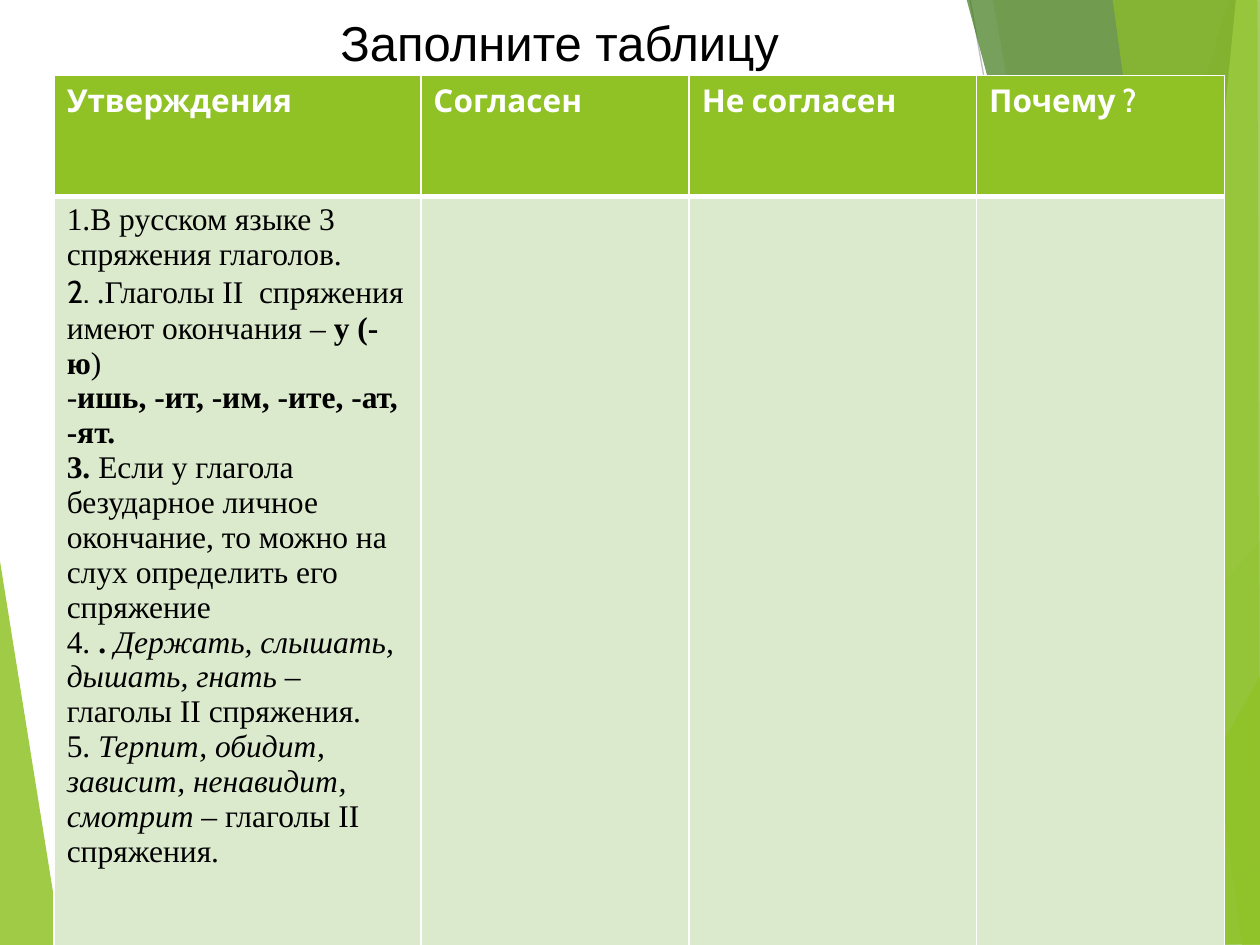
from lxml import etree
from pptx import Presentation
from pptx.dml.color import RGBColor
from pptx.enum.shapes import MSO_CONNECTOR
from pptx.enum.text import MSO_ANCHOR, PP_ALIGN
from pptx.oxml.ns import qn
from pptx.util import Inches, Pt

STRAIGHT = MSO_CONNECTOR.STRAIGHT
TOP = MSO_ANCHOR.TOP
CENTER = PP_ALIGN.CENTER

WHITE = RGBColor(0xFF, 0xFF, 0xFF)
BLACK = RGBColor(0, 0, 0)
GREEN = RGBColor(0x90, 0xC2, 0x26)
MID_GREEN = RGBColor(0x54, 0xA0, 0x21)
DARK_GREEN = RGBColor(0x3F, 0x78, 0x19)
LIGHT_GREEN = RGBColor(0xC0, 0xE4, 0x74)
PALE_GREEN = RGBColor(0xDB, 0xE9, 0xCD)
LIGHT_GRAY = RGBColor(0xD9, 0xD9, 0xD9)
GRAY = RGBColor(0xBF, 0xBF, 0xBF)
SERIF = "Times New Roman"
SANS = "Cabin"

prs = Presentation()
prs.slide_width, prs.slide_height = Inches(10), Inches(7.5)
slide = prs.slides.add_slide(prs.slide_layouts[5])
shapes = slide.shapes


def add_facet(points, color, opacity):
    corners = [(Inches(x), Inches(y)) for x, y in points]
    builder = shapes.build_freeform(*corners[0], scale=1.0)
    builder.add_line_segments(corners[1:], close=True)
    facet = builder.convert_to_shape()
    facet.shadow.inherit = False
    facet.fill.solid()
    facet.fill.fore_color.rgb = color
    facet.line.fill.background()
    srgb = facet.element.spPr.find(".//" + qn("a:srgbClr"))
    etree.SubElement(srgb, qn("a:alpha"), val=str(opacity * 1000))


def set_border(cell, side, width):
    props = cell._tc.get_or_add_tcPr()
    border = etree.SubElement(props, qn("a:" + side), w=str(Pt(width)))
    fill = etree.SubElement(border, qn("a:solidFill"))
    etree.SubElement(fill, qn("a:srgbClr"), val=str(WHITE))


add_facet([(-0.01, 4.39), (0.49, 7.51), (-0.01, 7.5)], GREEN, 85)

for x1, y1, x2, y2, color in [
    (5.61, 7.5, 10.01, 4.57, LIGHT_GRAY),
    (7.7, 0, 9.04, 7.5, GRAY),
]:
    ray = shapes.add_connector(STRAIGHT, Inches(x1), Inches(y1), Inches(x2), Inches(y2))
    ray.line.color.rgb = color
    ray.line.width = Pt(0.75)
    etree.SubElement(ray.element.spPr, qn("a:effectLst"))

for points, color, opacity in [
    ([(9.75, 0), (7.54, 7.5), (10.02, 7.51), (10.01, 0.01)], GREEN, 30),
    ([(7.88, -0.01), (9.19, 7.5), (10.01, 7.5), (10.01, -0.01)], GREEN, 20),
    ([(7.26, 7.5), (10, 4.29), (10.01, 7.5)], MID_GREEN, 72),
    ([(7.67, -0.01), (9.7, 7.5), (10.01, 7.49), (10.01, -0.01)], DARK_GREEN, 70),
    ([(9.81, -0.01), (9.07, 7.5), (10.01, 7.5), (10, -0.01)], LIGHT_GREEN, 70),
    ([(8.83, -0.01), (9.86, 7.5), (10, 7.5), (9.98, -0.01)], GREEN, 65),
    ([(8.81, 7.5), (10.01, 5.35), (10.01, 7.49)], GREEN, 80),
]:
    add_facet(points, color, opacity)

title = shapes.title
title.element.getparent().append(title.element)
title.left, title.top = Inches(1.38), Inches(0)
title.width, title.height = Inches(6.23), Inches(1.15)
title.text_frame.text = "Заполните таблицу "
title.text_frame.vertical_anchor = TOP
title.text_frame.margin_top = Inches(0.1)
heading = title.text_frame.paragraphs[0]
heading.alignment = CENTER
heading.font.size = Pt(28)
heading.font.name = "Arial"
heading.font.color.rgb = BLACK

headers = ["Утверждения", "Согласен", "Не согласен", "Почему ?"]
column_widths = [2.91, 2.13, 2.28, 1.97]
row_heights = [0.96, 8.11]
table = shapes.add_table(
    2, 4, Inches(0.43), Inches(0.6), Inches(9.29), Inches(9.07)
).table
for column, width in zip(table.columns, column_widths):
    column.width = Inches(width)
for row, height in zip(table.rows, row_heights):
    row.height = Inches(height)

for row_index, (fill_color, top, bottom) in enumerate([(GREEN, 1, 3), (PALE_GREEN, 3, 1)]):
    for cell in table.rows[row_index].cells:
        for side, width in [("lnL", 1), ("lnR", 1), ("lnT", top), ("lnB", bottom)]:
            set_border(cell, side, width)
        cell.fill.solid()
        cell.fill.fore_color.rgb = fill_color

for cell, header in zip(table.rows[0].cells, headers):
    cell.text = header
    label = cell.text_frame.paragraphs[0]
    label.font.size = Pt(18)
    label.font.name = SANS
    label.font.bold = True
    label.font.color.rgb = WHITE

statements = [
    [("1.В русском языке 3 спряжения глаголов.", SERIF, "")],
    [
        ("2. ", SANS, ""),
        (".Глаголы ІІ  спряжения имеют окончания – ", SERIF, ""),
        ("у (-ю", SERIF, "b"),
        (")", SERIF, ""),
    ],
    [("-", SERIF, ""), ("ишь, -ит, -им, -ите, -ат, -ят.", SERIF, "b")],
    [
        ("3. ", SERIF, "b"),
        ("Если у глагола безударное личное окончание, то можно на слух "
         "определить его спряжение", SERIF, ""),
    ],
    [
        ("4. ", SERIF, ""),
        (". ", SERIF, "b"),
        ("Держать, слышать, дышать, гнать – ", SERIF, "i"),
        ("глаголы ІІ спряжения.", SERIF, ""),
    ],
    [
        ("5. ", SERIF, ""),
        ("Терпит, обидит, зависит, ненавидит, смотрит – ", SERIF, "i"),
        ("глаголы ІІ спряжения.", SERIF, ""),
    ],
]
statement_frame = table.cell(1, 0).text_frame
for index, pieces in enumerate(statements):
    statement = statement_frame.add_paragraph() if index else statement_frame.paragraphs[0]
    statement.font.size = Pt(18)
    statement.font.color.rgb = BLACK
    for text, font_name, style in pieces:
        piece = statement.add_run()
        piece.text = text
        piece.font.name = font_name
        piece.font.bold = style == "b"
        piece.font.italic = style == "i"

prs.save("out.pptx")
